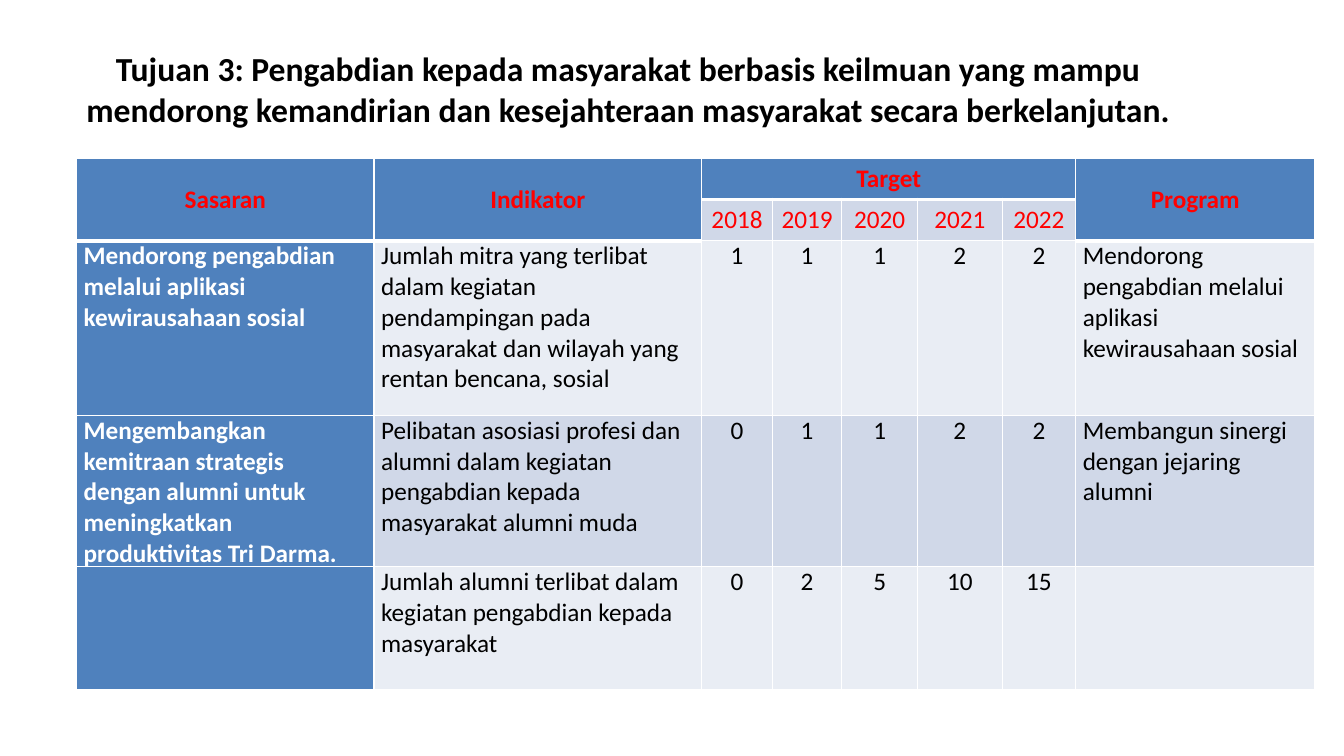
from lxml.etree import SubElement
from pptx import Presentation
from pptx.dml.color import RGBColor
from pptx.enum.text import MSO_ANCHOR, PP_ALIGN
from pptx.oxml.ns import qn
from pptx.util import Inches, Pt

BLUE, PALE, MIST = "4F81BD", "D0D8E8", "E9EDF4"
RED, BLACK, WHITE = "FF0000", "000000", "FFFFFF"

TITLE = (
    "Tujuan 3: Pengabdian kepada masyarakat berbasis keilmuan yang mampu "
    "mendorong kemandirian dan kesejahteraan masyarakat secara berkelanjutan."
)
COLUMN_WIDTHS = [2.95, 3.25, 0.7, 0.69, 0.75, 0.84, 0.73, 2.37]
ROW_HEIGHTS = [0.41, 0.41, 1.73, 1.48, 1.22]
FIRST_YEAR, LAST_YEAR, PROGRAM = 2, 6, 7
ROWS = [
    ["Sasaran", "Indikator", "Target", "", "", "", "", "Program"],
    ["", "", "2018", "2019", "2020", "2021", "2022", ""],
    [
        "Mendorong pengabdian melalui aplikasi kewirausahaan sosial",
        "Jumlah mitra yang terlibat dalam kegiatan pendampingan pada "
        "masyarakat dan wilayah yang rentan bencana, sosial",
        "1", "1", "1", "2", "2",
        "Mendorong pengabdian melalui aplikasi kewirausahaan sosial",
    ],
    [
        "Mengembangkan kemitraan strategis dengan alumni untuk "
        "meningkatkan produktivitas Tri Darma.",
        "Pelibatan asosiasi profesi dan alumni dalam kegiatan pengabdian "
        "kepada masyarakat alumni muda",
        "0", "1", "1", "2", "2",
        "Membangun sinergi dengan jejaring alumni",
    ],
    [
        "",
        "Jumlah alumni terlibat dalam kegiatan pengabdian kepada masyarakat",
        "0", "2", "5", "10", "15",
        "",
    ],
]


def color(value):
    return RGBColor.from_string(value)


def write(frame, text, size, ink, bold, align):
    para = frame.paragraphs[0]
    para.alignment = align
    if not text:
        para.font.size = Pt(size)
        return
    span = para.add_run()
    span.text = text
    for name, value in {"name": "Calibri", "size": Pt(size), "bold": bold}.items():
        setattr(span.font, name, value)
    span.font.color.rgb = color(ink)


def add_title(page):
    box = page.shapes.add_textbox(Inches(0.69), Inches(0.3), Inches(11.08), Inches(1.16))
    frame = box.text_frame
    frame.word_wrap = True
    frame.vertical_anchor = MSO_ANCHOR.MIDDLE
    write(frame, TITLE, 24, BLACK, True, PP_ALIGN.CENTER)


def set_borders(cell, bottom_width):
    properties = cell._tc.get_or_add_tcPr()
    for side, width in {"L": 1, "R": 1, "T": 1, "B": bottom_width}.items():
        line = SubElement(properties, qn(f"a:ln{side}"), w=str(Pt(width)))
        fill = SubElement(line, qn("a:solidFill"))
        SubElement(fill, qn("a:srgbClr"), val=WHITE)


def cell_look(row, column):
    """Return the fill, text colour and boldness of a table cell."""
    is_year = FIRST_YEAR <= column <= LAST_YEAR
    if row == 0 or (row == 1 and not is_year):
        return BLUE, RED, True
    if row == 1:
        return PALE, RED, False
    if column == 0:
        return BLUE, WHITE, True
    return (PALE if row % 2 else MIST), BLACK, False


def fill_cell(cell, text, row, column):
    background, ink, bold = cell_look(row, column)
    is_header = row < 2
    centered = is_header or FIRST_YEAR <= column <= LAST_YEAR
    layout = {
        "margin_left": Inches(0.07),
        "margin_right": Inches(0.07),
        "margin_top": 0,
        "margin_bottom": 0,
        "vertical_anchor": MSO_ANCHOR.MIDDLE if is_header else MSO_ANCHOR.TOP,
    }
    for name, value in layout.items():
        setattr(cell, name, value)
    set_borders(cell, 3 if is_header and background == BLUE else 1)
    cell.fill.solid()
    cell.fill.fore_color.rgb = color(background)
    write(cell.text_frame, text, 18, ink, bold,
          PP_ALIGN.CENTER if centered else PP_ALIGN.LEFT)


def add_target_table(page):
    table = page.shapes.add_table(
        len(ROW_HEIGHTS), len(COLUMN_WIDTHS),
        Inches(0.76), Inches(1.57), Inches(12.28), Inches(5.25),
    ).table
    table.first_row = table.horz_banding = False
    for column, width in zip(table.columns, COLUMN_WIDTHS):
        column.width = Inches(width)
    for row, height in zip(table.rows, ROW_HEIGHTS):
        row.height = Inches(height)
    for row, texts in enumerate(ROWS):
        for column, text in enumerate(texts):
            fill_cell(table.cell(row, column), text, row, column)
    table.cell(0, FIRST_YEAR).merge(table.cell(0, LAST_YEAR))
    for column in (0, 1, PROGRAM):
        table.cell(0, column).merge(table.cell(1, column))


def main():
    deck = Presentation()
    deck.slide_width, deck.slide_height = Inches(13.33), Inches(7.5)
    page = deck.slides.add_slide(deck.slide_layouts[6])
    add_title(page)
    add_target_table(page)
    deck.save("out.pptx")


if __name__ == "__main__":
    main()
